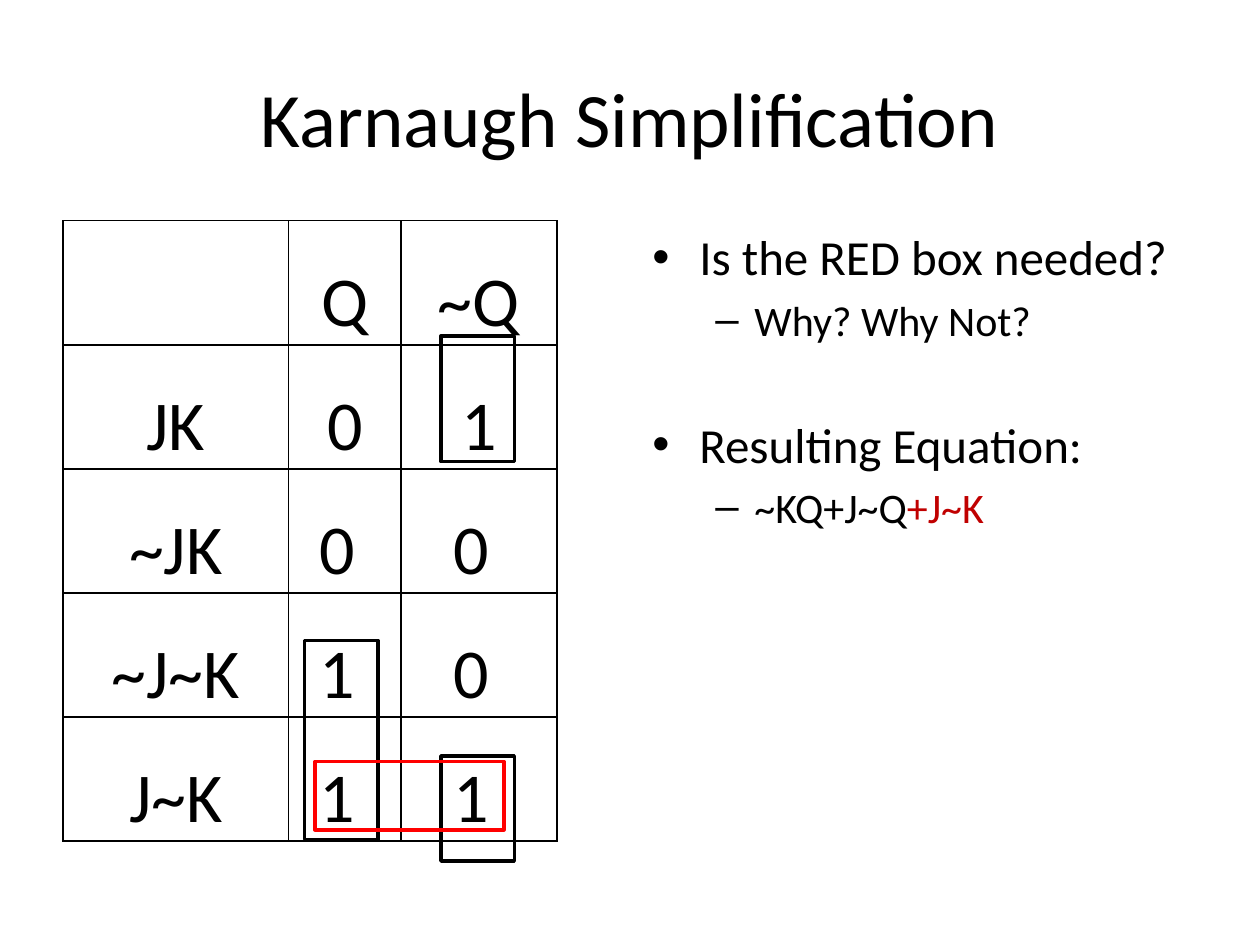
from lxml import etree
from pptx import Presentation
from pptx import util as u
from pptx.dml.color import RGBColor
from pptx.enum import shapes, text
from pptx.oxml.ns import qn

BLACK, RED, DARK_RED = "000000", "FF0000", "C00000"
COLUMN_WIDTHS = (4.55, 2.26, 3.15)
ROW_HEIGHT = 2.5
KARNAUGH_MAP = (
    ("", "Q", "~Q"),
    ("JK", "0", "1"),
    ("~JK", "0 ", "0 "),
    ("~J~K", "1 ", "0 "),
    ("J~K", "1 ", "1 "),
)
LEVELS = (
    {"bullet": "•", "size": 28, "margin": 0.95, "indent": -0.95},
    {"bullet": "–", "size": 24, "margin": 2.06, "indent": -0.79},
)
POINTS = (
    (0, 5.6, (("Is the RED box needed?", BLACK),)),
    (1, 4.8, (("Why? Why Not?", BLACK),)),
    (0, 39.7, (("Resulting Equation:", BLACK),)),
    (1, 4.8, (("~KQ+J~Q", BLACK), ("+J~K", DARK_RED))),
)
GROUP_BOXES = (
    (8.89, 15.24, 1.48, 2.12, BLACK),
    (6.14, 12.91, 1.48, 4.02, BLACK),
    (8.89, 6.77, 1.48, 2.54, BLACK),
    (6.35, 15.35, 3.81, 1.38, RED),
)


def rgb(value):
    return RGBColor.from_string(value)


def cm(*values):
    return [u.Cm(value) for value in values]


def set_values(obj, values):
    for name, value in values.items():
        setattr(obj, name, value)


def add_run(p, content, size, color=BLACK):
    r = p.add_run()
    r.text = content
    set_values(r.font, {"name": "Calibri", "size": u.Pt(size)})
    r.font.color.rgb = rgb(color)


def add_title(s, content):
    sp = s.shapes.title
    left, top, width, height = cm(1.27, 0.76, 22.86, 3.18)
    set_values(sp, {"left": left, "top": top, "width": width, "height": height})
    tf = sp.text_frame
    set_values(tf, {"vertical_anchor": text.MSO_ANCHOR.MIDDLE, "word_wrap": True})
    p = tf.paragraphs[0]
    p.alignment = text.PP_ALIGN.CENTER
    add_run(p, content, 44)


def set_bullet(p, level):
    pPr = p._p.get_or_add_pPr()
    pPr.set("marL", str(u.Cm(level["margin"])))
    pPr.set("indent", str(u.Cm(level["indent"])))
    etree.SubElement(pPr, qn("a:buFont")).set("typeface", "Arial")
    etree.SubElement(pPr, qn("a:buChar")).set("char", level["bullet"])


def add_points(s):
    tf = s.shapes.add_textbox(*cm(12.9, 4.45, 11.23, 12.57)).text_frame
    tf.word_wrap = True
    for i, (depth, space, runs) in enumerate(POINTS):
        p = tf.add_paragraph() if i else tf.paragraphs[0]
        set_values(p, {"level": depth, "space_before": u.Pt(space)})
        set_bullet(p, LEVELS[depth])
        for content, color in runs:
            add_run(p, content, LEVELS[depth]["size"], color)


def set_borders(cell):
    tcPr = cell._tc.get_or_add_tcPr()
    for i, side in enumerate(("lnL", "lnR", "lnT", "lnB")):
        ln = etree.Element(qn(f"a:{side}"), w=str(u.Pt(1)))
        fill = etree.SubElement(ln, qn("a:solidFill"))
        etree.SubElement(fill, qn("a:srgbClr")).set("val", BLACK)
        tcPr.insert(i, ln)


def fill_cell(cell, content):
    margin = u.Cm(0.03)
    set_values(cell, {
        "vertical_anchor": text.MSO_ANCHOR.BOTTOM,
        "margin_left": margin,
        "margin_right": margin,
        "margin_top": margin,
        "margin_bottom": 0,
    })
    cell.fill.background()
    set_borders(cell)
    if content:
        p = cell.text_frame.paragraphs[0]
        p.alignment = text.PP_ALIGN.CENTER
        add_run(p, content, 40)


def add_map(s):
    rows, cols = len(KARNAUGH_MAP), len(COLUMN_WIDTHS)
    size = cm(1.27, 4.45, sum(COLUMN_WIDTHS), rows * ROW_HEIGHT)
    table = s.shapes.add_table(rows, cols, *size).table
    set_values(table, {"first_row": False, "horz_banding": False})
    for column, width in zip(table.columns, COLUMN_WIDTHS):
        column.width = u.Cm(width)
    for row, contents in zip(table.rows, KARNAUGH_MAP):
        row.height = u.Cm(ROW_HEIGHT)
        for cell, content in zip(row.cells, contents):
            fill_cell(cell, content)


def add_group_box(s, left, top, width, height, color):
    sp = s.shapes.add_shape(shapes.MSO_SHAPE.RECTANGLE, *cm(left, top, width, height))
    sp.shadow.inherit = False
    sp.fill.background()
    sp.line.color.rgb = rgb(color)
    sp.line.width = u.Pt(2)


def main():
    prs = Presentation()
    set_values(prs, {"slide_width": u.Cm(25.4), "slide_height": u.Cm(19.05)})
    s = prs.slides.add_slide(prs.slide_layouts[5])
    add_title(s, "Karnaugh Simplification")
    add_points(s)
    add_map(s)
    for box in GROUP_BOXES:
        add_group_box(s, *box)
    prs.save("out.pptx")


if __name__ == "__main__":
    main()
